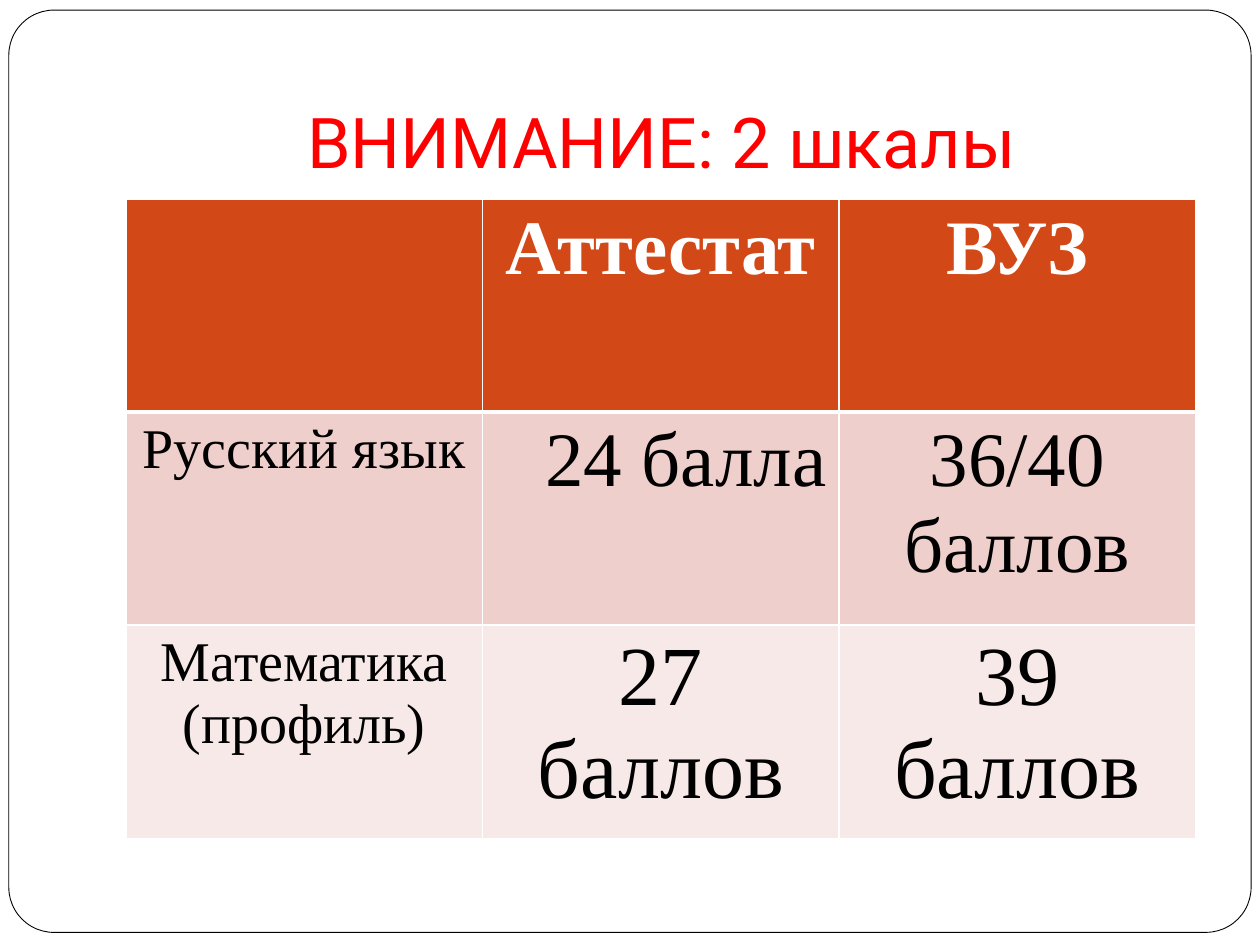
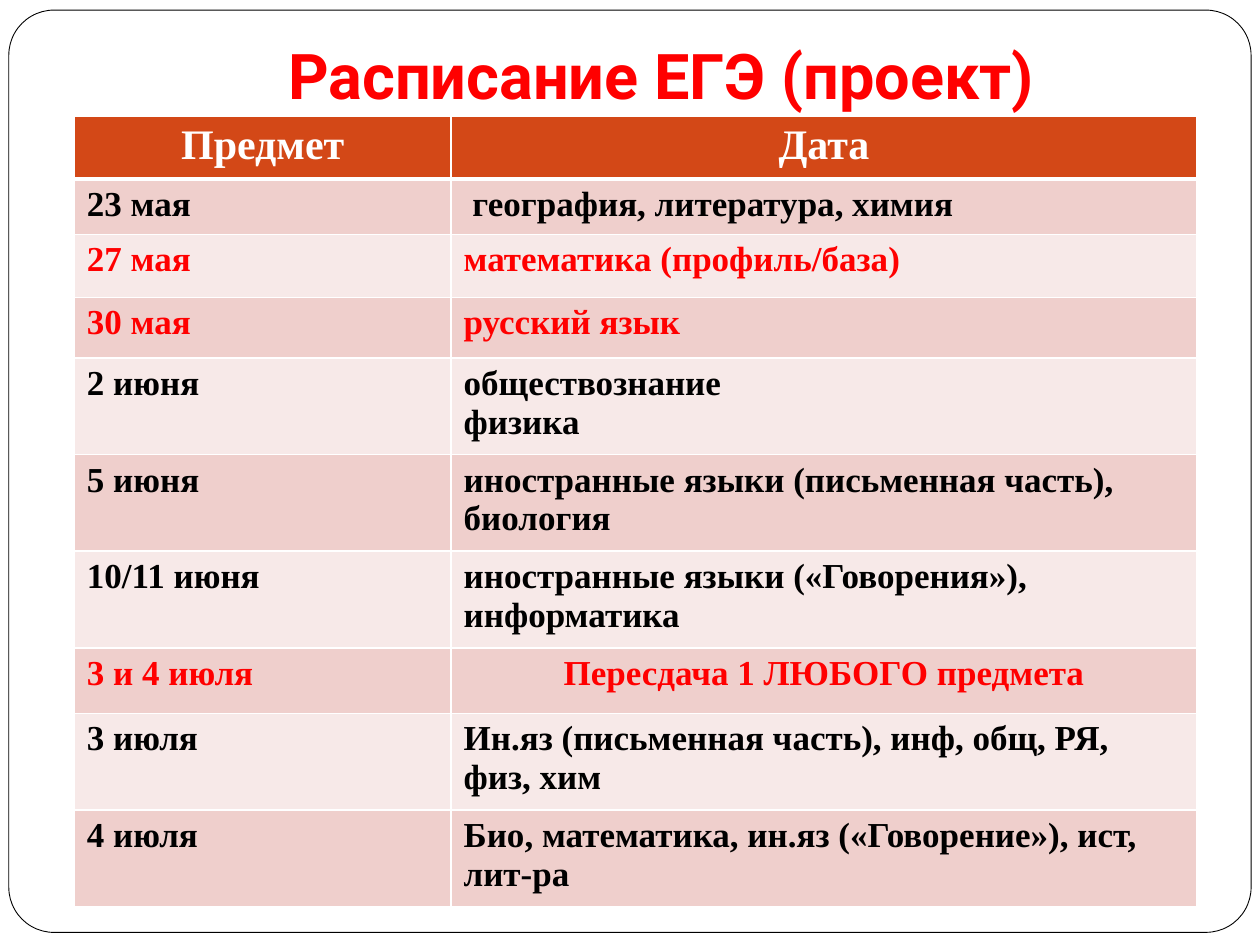
from lxml import etree
from pptx import Presentation
from pptx import util as u
from pptx.dml.color import RGBColor
from pptx.enum import shapes, text
from pptx.oxml.ns import qn

COLORS = {"white": "FFFFFF", "black": "000000", "red": "FF0000",
          "header": "D34817", "band_dark": "EFCFCC", "band_light": "F7E9E8"}
TITLE_FONT, TABLE_FONT = "Roboto", "Times New Roman"
LEFT, CENTER, RIGHT = (text.PP_ALIGN.LEFT, text.PP_ALIGN.CENTER,
                       text.PP_ALIGN.RIGHT)


def rgb(name):
    return RGBColor.from_string(COLORS[name])


def write(tf, content, size=20, font=TABLE_FONT, color="black", bold=False,
          align=LEFT):
    for i, line in enumerate(content.split("\n")):
        p = tf.paragraphs[0] if i == 0 else tf.add_paragraph()
        p.alignment = align
        r = p.add_run()
        r.text = line
        r.font.size = u.Pt(size)
        r.font.name = font
        r.font.bold = bold
        r.font.color.rgb = rgb(color)


def set_borders(cell, top, bottom):
    tc_pr = cell._tc.get_or_add_tcPr()
    widths = {"a:lnL": 1, "a:lnR": 1, "a:lnT": top, "a:lnB": bottom}
    for i, (tag, width) in enumerate(widths.items()):
        ln = etree.Element(qn(tag), w=str(u.Pt(width)))
        fill = etree.SubElement(ln, qn("a:solidFill"))
        etree.SubElement(fill, qn("a:srgbClr"), val=COLORS["white"])
        tc_pr.insert(i, ln)


def add_frame(s):
    box = [u.Inches(v) for v in (0.07, 0.08, 9.86, 7.32)]
    sp = s.shapes.add_shape(shapes.MSO_SHAPE.ROUNDED_RECTANGLE, *box)
    sp.adjustments[0] = 0.049
    sp.shadow.inherit = False
    sp.fill.solid()
    sp.fill.fore_color.rgb = rgb("white")
    sp.line.color.rgb = rgb("black")
    sp.line.width = u.Pt(0.5)


def add_title(s, content, height, **fmt):
    box = [u.Inches(v) for v in (1, 0.3, 8.5, height)]
    tf = s.shapes.add_textbox(*box).text_frame
    tf.word_wrap = True
    tf.vertical_anchor = text.MSO_ANCHOR.BOTTOM
    tf.margin_bottom = u.Inches(0.1)
    write(tf, content, font=TITLE_FONT, color="red", align=CENTER, **fmt)


def add_grid(s, left, top, col_widths, row_heights, rows):
    table = s.shapes.add_table(
        len(rows), len(col_widths), u.Inches(left), u.Inches(top),
        u.Inches(sum(col_widths)), u.Inches(sum(row_heights))).table
    for column, width in zip(table.columns, col_widths):
        column.width = u.Inches(width)
    for i, (height, row) in enumerate(zip(row_heights, rows)):
        table.rows[i].height = u.Inches(height)
        band = "header" if i == 0 else "band_dark" if i % 2 else "band_light"
        for j, (content, fmt) in enumerate(row):
            cell = table.cell(i, j)
            cell.fill.solid()
            cell.fill.fore_color.rgb = rgb(band)
            set_borders(cell, 3 if i == 1 else 1, 3 if i == 0 else 1)
            if content:
                write(cell.text_frame, content, **fmt)


def header_row(labels, size):
    fmt = dict(size=size, color="white", bold=True, align=CENTER)
    return [(label, fmt) for label in labels]


def score_row(subject, certificate, university, size, align=CENTER):
    return [(subject, dict(size=32, align=CENTER)),
            (certificate, dict(size=size, align=align)),
            (university, dict(size=size, align=CENTER))]


def exam_row(date, subjects, color="black", align=LEFT):
    fmt = dict(color=color, bold=True)
    return [(date, fmt), (subjects, dict(fmt, align=align))]


def scales_slide(s):
    add_frame(s)
    add_title(s, "ВНИМАНИЕ: 2 шкалы", 1.25, size=40)
    add_grid(s, 1, 1.58, [2.83] * 3, [1.69] * 3, [
        header_row(["", "Аттестат", "ВУЗ"], 44),
        score_row("Русский язык", "24 балла", "36/40 баллов", 44, RIGHT),
        score_row("Математика (профиль)", "27 баллов", "39 баллов", 48),
    ])


def schedule_slide(s):
    add_frame(s)
    add_title(s, "Расписание ЕГЭ (проект)", 0.69, size=36, bold=True)
    heights = [0.48, 0.44, 0.5, 0.48, 0.48, 0.49, 0.47, 0.52, 0.44, 0.48]
    add_grid(s, 0.59, 0.92, [2.99, 5.92], heights, [
        header_row(["Предмет", "Дата"], 24),
        exam_row("23 мая", " география, литература, химия"),
        exam_row("27 мая", "математика (профиль/база)", "red"),
        exam_row("30 мая", "русский язык", "red"),
        exam_row("2 июня", "обществознание\nфизика"),
        exam_row("5 июня", "иностранные языки (письменная часть), биология"),
        exam_row("10/11 июня", "иностранные языки («Говорения»), информатика"),
        exam_row("3 и 4 июля", "Пересдача 1 ЛЮБОГО предмета", "red", CENTER),
        exam_row("3 июля", "Ин.яз (письменная часть), инф, общ, РЯ, физ, хим"),
        exam_row("4 июля",
                 "Био, математика, ин.яз («Говорение»), ист, лит-ра"),
    ])


def main():
    prs = Presentation()
    prs.slide_width, prs.slide_height = u.Inches(10), u.Inches(7.5)
    for build in (scales_slide, schedule_slide):
        build(prs.slides.add_slide(prs.slide_layouts[6]))
    prs.save("out.pptx")


if __name__ == "__main__":
    main()
